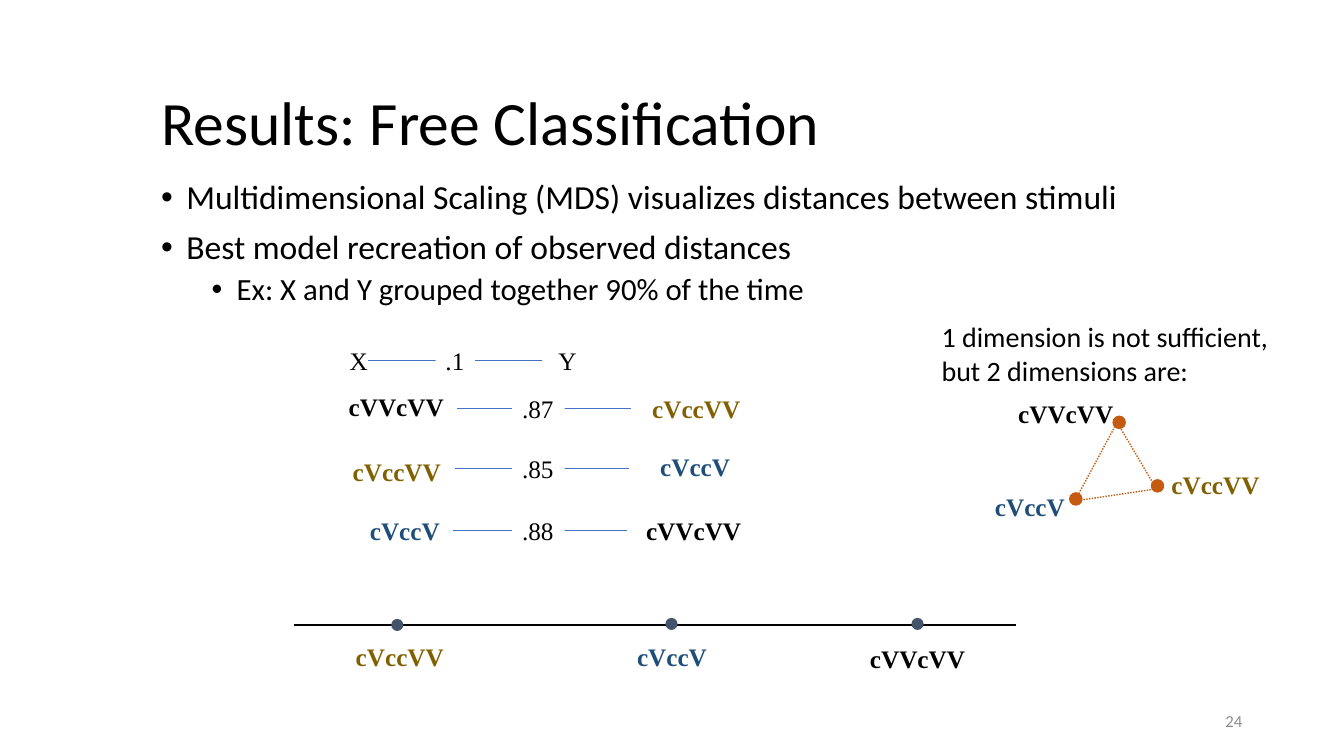
import pptx
import pptx.util
import pptx.dml.color
import pptx.enum.dml
import pptx.enum.shapes
import pptx.enum.text
import pptx.oxml
import pptx.oxml.ns
from pptx.util import Inches

THEME = {
    "sans": "Calibri", "serif": "Times New Roman",
    "title": 44, "bullet": 24, "sub_bullet": 22, "note": 20, "label": 18, "number": 12,
    "black": "000000", "white": "FFFFFF", "gray": "8C8C8C", "gold": "806000",
    "navy": "1F4E79", "blue": "4472C4", "slate": "44546A", "orange": "C55A11",
}

TITLE = "Results: Free Classification"
BULLETS = [
    ("Multidimensional Scaling (MDS) visualizes distances between stimuli", 0),
    ("Best model recreation of observed distances", 0),
    ("Ex: X and Y grouped together 90% of the time", 1),
]
LEVELS = [("bullet", 0.25, 10), ("sub_bullet", 0.75, 5)]
NOTE = "1 dimension is not sufficient, but 2 dimensions are:"
PAGE_NUMBER = "24"

STIMULI = {
    "cVVcVV": ("black", 1.16), "cVccVV": ("gold", 1.09), "cVccV": ("navy", 0.9),
    "X": ("black", 0.38), "Y": ("black", 0.38),
}
PAIRS = [
    (".1", 4.32, 3.38, 0.39, 3.65),
    (".87", 5.08, 3.85, 0.52, 4.53),
    (".85", 5.08, 4.45, 0.52, 4.51),
    (".88", 5.08, 5.06, 0.52, 4.49),
]
PAIR_LENGTH = 1.73
LABELS = [
    ("X", 3.37, 3.38), ("Y", 5.44, 3.38),
    ("cVVcVV", 3.36, 3.83), ("cVccVV", 6.37, 3.85),
    ("cVccVV", 3.4, 4.48), ("cVccV", 6.45, 4.43),
    ("cVccV", 3.57, 5.06), ("cVVcVV", 6.31, 5.06),
    ("cVccVV", 3.43, 6.31), ("cVccV", 6.22, 6.31), ("cVVcVV", 8.53, 6.33),
    ("cVccVV", 11.52, 4.61), ("cVccV", 9.77, 4.83), ("cVVcVV", 10, 3.9),
]
AXIS = (2.92, 10.08, 6.2)
AXIS_DOTS = [(3.94, 6.2), (6.66, 6.19), (9.1, 6.19)]
TRIANGLE = [(10.66, 4.97), (11.08, 4.19), (11.47, 4.85)]
TRIANGLE_DOTS = [(10.67, 4.95), (11.1, 4.19), (11.48, 4.82)]
DOT = 0.12
LABEL_HEIGHT = 0.4


def color(name):
    return pptx.dml.color.RGBColor.from_string(THEME[name])


def add_run(para, text, size, ink="black", font="sans", bold=False):
    span = para.add_run()
    span.text = text
    span.font.name = THEME[font]
    span.font.size = pptx.util.Pt(THEME[size])
    span.font.bold = bold
    span.font.color.rgb = color(ink)


def add_box(page, left, top, width, height, wrap=True):
    box = page.shapes.add_textbox(Inches(left), Inches(top), Inches(width), Inches(height))
    box.text_frame.word_wrap = wrap
    return box


def add_line(page, start, end, y, ink, weight):
    line = page.shapes.add_connector(
        pptx.enum.shapes.MSO_CONNECTOR.STRAIGHT, Inches(start), Inches(y), Inches(end), Inches(y))
    line.line.color.rgb = color(ink)
    line.line.width = pptx.util.Pt(weight)
    line._element.spPr.append(pptx.oxml.parse_xml(
        "<a:effectLst %s/>" % pptx.oxml.ns.nsdecls("a")))


def add_dot(page, center, ink, outlined=False):
    x, y = center
    dot = page.shapes.add_shape(
        pptx.enum.shapes.MSO_SHAPE.OVAL,
        Inches(x - DOT / 2), Inches(y - DOT / 2), Inches(DOT), Inches(DOT))
    dot.shadow.inherit = False
    dot.fill.solid()
    dot.fill.fore_color.rgb = color(ink)
    if outlined:
        dot.line.color.rgb = color(ink)
        dot.line.width = pptx.util.Pt(1)
    else:
        dot.line.fill.background()


def add_title(page):
    frame = add_box(page, 1.5, 0.75, 10.5, 0.99).text_frame
    frame.vertical_anchor = pptx.enum.text.MSO_ANCHOR.MIDDLE
    frame.paragraphs[0].line_spacing = 0.9
    add_run(frame.paragraphs[0], TITLE, "title")


def add_bullets(page):
    frame = add_box(page, 1.5, 1.74, 10.5, 4.68).text_frame
    for index, (text, level) in enumerate(BULLETS):
        para = frame.add_paragraph() if index else frame.paragraphs[0]
        size, indent, space = LEVELS[level]
        para.level = level
        para.line_spacing = 0.9
        para.space_before = pptx.util.Pt(space)
        properties = para._p.get_or_add_pPr()
        properties.set("marL", str(Inches(indent)))
        properties.set("indent", str(Inches(-0.25)))
        for tag in ('buFont %s typeface="Arial"', 'buChar %s char="•"'):
            properties.append(pptx.oxml.parse_xml(
                "<a:" + tag % pptx.oxml.ns.nsdecls("a") + "/>"))
        add_run(para, text, size)


def add_pairs(page):
    for distance, left, top, width, start in PAIRS:
        add_line(page, start, start + PAIR_LENGTH, top + LABEL_HEIGHT / 2, "blue", 0.5)
        box = add_box(page, left, top, width, LABEL_HEIGHT, wrap=False)
        box.fill.solid()
        box.fill.fore_color.rgb = color("white")
        add_run(box.text_frame.paragraphs[0], distance, "label", font="serif")


def add_labels(page):
    for name, left, top in LABELS:
        ink, width = STIMULI[name]
        box = add_box(page, left, top, width, LABEL_HEIGHT, wrap=False)
        add_run(box.text_frame.paragraphs[0], name, "label", ink, "serif", bold=len(name) > 1)


def add_axis(page):
    add_line(page, *AXIS, "black", 1.5)
    for center in AXIS_DOTS:
        add_dot(page, center, "slate")


def add_triangle(page):
    for center in TRIANGLE_DOTS:
        add_dot(page, center, "orange", outlined=True)
    corners = [(Inches(x), Inches(y)) for x, y in TRIANGLE]
    builder = page.shapes.build_freeform(*corners[0])
    builder.add_line_segments(corners[1:], close=True)
    triangle = builder.convert_to_shape()
    triangle.shadow.inherit = False
    triangle.fill.background()
    triangle.line.color.rgb = color("orange")
    triangle.line.width = pptx.util.Pt(1)
    triangle.line.dash_style = pptx.enum.dml.MSO_LINE.ROUND_DOT


def add_page_number(page):
    frame = add_box(page, 9.42, 6.95, 3, 0.4).text_frame
    frame.vertical_anchor = pptx.enum.text.MSO_ANCHOR.MIDDLE
    frame.paragraphs[0].alignment = pptx.enum.text.PP_ALIGN.RIGHT
    add_run(frame.paragraphs[0], PAGE_NUMBER, "number", "gray")


def main():
    deck = pptx.Presentation()
    deck.slide_width, deck.slide_height = Inches(13.33), Inches(7.5)
    page = deck.slides.add_slide(deck.slide_layouts[6])
    add_title(page)
    add_bullets(page)
    add_pairs(page)
    add_axis(page)
    add_triangle(page)
    add_labels(page)
    note = add_box(page, 9.24, 3.12, 3.49, 0.77)
    add_run(note.text_frame.paragraphs[0], NOTE, "note")
    add_page_number(page)
    deck.save("out.pptx")


if __name__ == "__main__":
    main()
